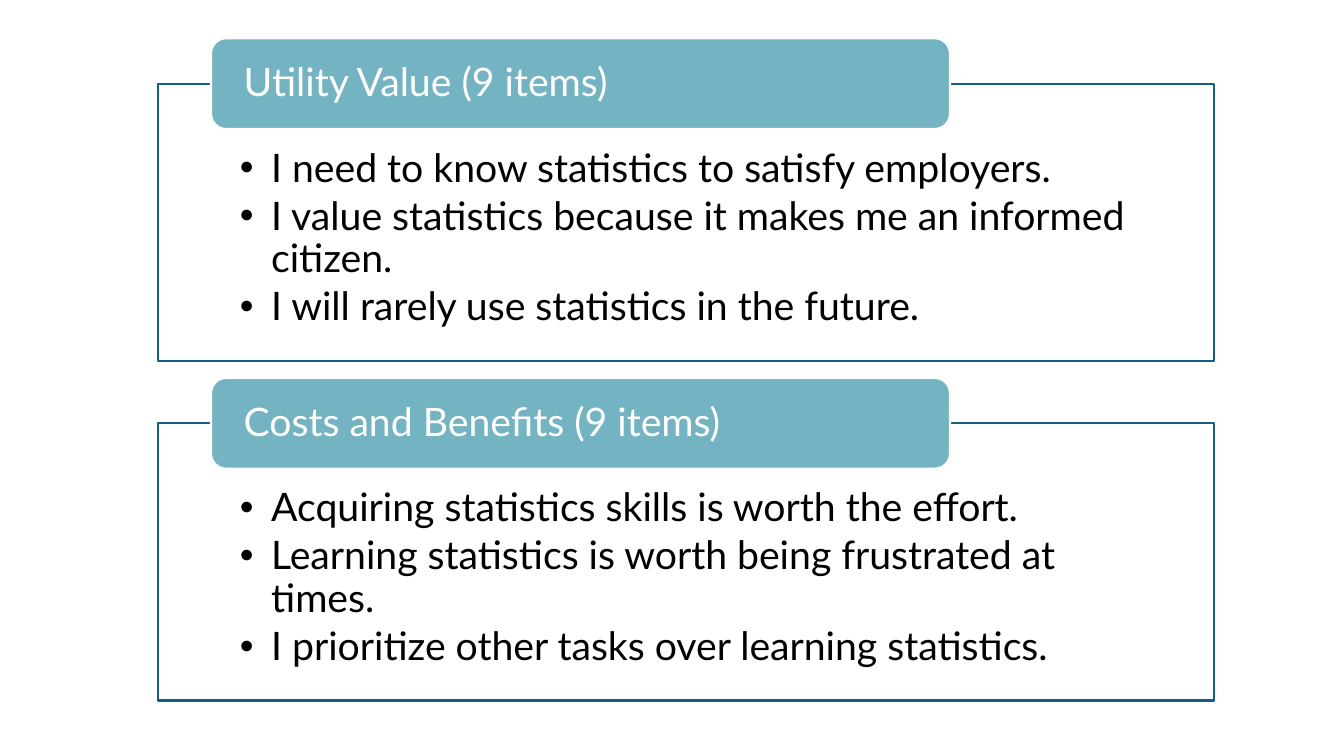
import pptx
import pptx.util
import pptx.dml.color
import pptx.enum.shapes
import pptx.enum.text
import pptx.oxml.ns
import lxml.etree

SCALES = [
    ("Utility Value (9 items)", [
        "I need to know statistics to satisfy employers.",
        "I value statistics because it makes me an informed citizen.",
        "I will rarely use statistics in the future.",
    ]),
    ("Costs and Benefits (9 items)", [
        "Acquiring statistics skills is worth the effort.",
        "Learning statistics is worth being frustrated at times.",
        "I prioritize other tasks over learning statistics.",
    ]),
]
COLORS = {"white": "FFFFFF", "teal": "74B3C1", "navy": "156082", "black": "000000"}
FONT, SIZE = "Lato", 28

# Layout in inches
SLIDE_W, SLIDE_H = 13.33, 7.5
BOX_X, BOX_Y, BOX_W, BOX_H = 1.57, 0.83, 10.47, 2.75
ROW_STEP = 3.37
HEAD_H = 0.9
HEAD_X, HEAD_W = BOX_X + BOX_W * 0.05, BOX_W * 0.7
HEAD_RISE = HEAD_H / 2
INDENT = 0.31

Inches, Pt = pptx.util.Inches, pptx.util.Pt
SHAPE = pptx.enum.shapes.MSO_SHAPE
ANCHOR = pptx.enum.text.MSO_ANCHOR


def rgb(name):
    return pptx.dml.color.RGBColor.from_string(COLORS[name])


def add_panel(slide, kind, box, fill, line, insets, anchor):
    sp = slide.shapes.add_shape(kind, *[Inches(v) for v in box])
    sp.shadow.inherit = False
    sp.fill.solid()
    sp.fill.fore_color.rgb = rgb(fill)
    sp.line.color.rgb = rgb(line)
    sp.line.width = Pt(1.5)
    tf = sp.text_frame
    tf.word_wrap = True
    tf.vertical_anchor = anchor
    tf.margin_left, tf.margin_top, tf.margin_right, tf.margin_bottom = [
        Inches(v) for v in insets]
    return sp


def write(tf, lines, color, gap):
    tf.text = "\n".join(lines)
    for p in tf.paragraphs:
        p.alignment = pptx.enum.text.PP_ALIGN.LEFT
        p.line_spacing = 0.9
        p.space_after = Pt(SIZE * gap)
        for r in p.runs:
            r.font.name = FONT
            r.font.size = Pt(SIZE)
            r.font.color.rgb = rgb(color)


def add_bullet(p):
    p.level = 1
    pPr = p._p.get_or_add_pPr()
    pPr.set("marL", str(Inches(INDENT)))
    pPr.set("indent", str(-Inches(INDENT)))
    for tag, key, value in (("a:buFont", "typeface", "Arial"), ("a:buChar", "char", "•")):
        lxml.etree.SubElement(pPr, pptx.oxml.ns.qn(tag)).set(key, value)


prs = pptx.Presentation()
prs.slide_width, prs.slide_height = Inches(SLIDE_W), Inches(SLIDE_H)
slide = prs.slides.add_slide(prs.slide_layouts[6])

for row, (title, items) in enumerate(SCALES):
    y = BOX_Y + row * ROW_STEP

    # Outlined box with the sample items
    sp = add_panel(slide, SHAPE.RECTANGLE, (BOX_X, y, BOX_W, BOX_H),
                   "white", "navy", (0.81, 0.64, 0.81, 0.22), ANCHOR.TOP)
    write(sp.text_frame, items, "black", 0.15)
    for p in sp.text_frame.paragraphs:
        add_bullet(p)

    # Header tab centred on the top edge of the box
    sp = add_panel(slide, SHAPE.ROUNDED_RECTANGLE, (HEAD_X, y - HEAD_RISE, HEAD_W, HEAD_H),
                   "teal", "white", (0.28, 0, 0.28, 0), ANCHOR.MIDDLE)
    write(sp.text_frame, [title], "white", 0.35)

prs.save("out.pptx")
